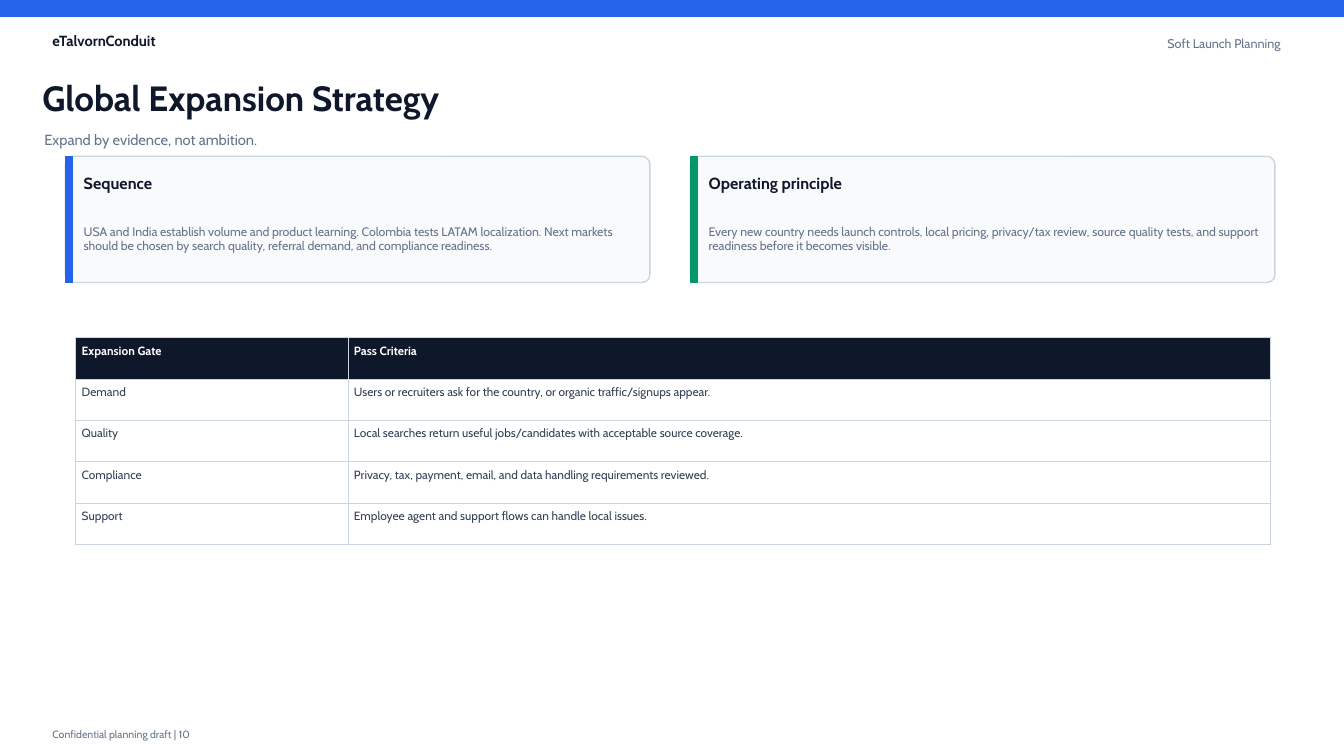
import pptx
import pptx.dml.color
import pptx.enum.shapes
import pptx.enum.text
import pptx.oxml
import pptx.oxml.ns
import pptx.util

Cm = pptx.util.Cm
Pt = pptx.util.Pt
RGBColor = pptx.dml.color.RGBColor
SHAPE = pptx.enum.shapes.MSO_SHAPE
ALIGN = pptx.enum.text.PP_ALIGN
ANCHOR = pptx.enum.text.MSO_ANCHOR

BLUE = RGBColor(0x25, 0x63, 0xEB)
GREEN = RGBColor(0x05, 0x96, 0x69)
INK = RGBColor(0x0F, 0x17, 0x2A)
SLATE = RGBColor(0x33, 0x41, 0x55)
GREY = RGBColor(0x64, 0x74, 0x8B)
BORDER = RGBColor(0xCB, 0xD5, 0xE1)
PANEL = RGBColor(0xF8, 0xFA, 0xFC)
WHITE = RGBColor(0xFF, 0xFF, 0xFF)

INSETS = ("margin_left", "margin_right", "margin_top", "margin_bottom")
CARDS = [
    ("Sequence", "USA and India establish volume and product learning. Colombia tests LATAM "
     "localization. Next markets should be chosen by search quality, referral demand, and "
     "compliance readiness.", BLUE),
    ("Operating principle", "Every new country needs launch controls, local pricing, privacy/tax "
     "review, source quality tests, and support readiness before it becomes visible.", GREEN),
]
GATES = [
    ("Expansion Gate", "Pass Criteria"),
    ("Demand", "Users or recruiters ask for the country, or organic traffic/signups appear."),
    ("Quality", "Local searches return useful jobs/candidates with acceptable source coverage."),
    ("Compliance", "Privacy, tax, payment, email, and data handling requirements reviewed."),
    ("Support", "Employee agent and support flows can handle local issues."),
]


def set_all(obj, values):
    """Set each attribute in a dict of format values."""
    for name, value in values.items():
        setattr(obj, name, value)


def write(tf, text, size, color, bold=False, align=ALIGN.LEFT):
    """Write one formatted paragraph into a text frame."""
    p = tf.paragraphs[0]
    p.alignment = align
    r = p.add_run()
    r.text = text
    set_all(r.font, {"name": "Cabin", "size": Pt(size), "bold": bold})
    r.font.color.rgb = color


def format_frame(tf, inset):
    """Wrap and centre a frame vertically, removing its insets if asked."""
    set_all(tf, {"word_wrap": True, "vertical_anchor": ANCHOR.MIDDLE,
                 "auto_size": pptx.enum.text.MSO_AUTO_SIZE.NONE})
    if not inset:
        set_all(tf, dict.fromkeys(INSETS, 0))


def add_text(s, box, text, size, color, bold=False, align=ALIGN.LEFT, inset=False):
    """Add a text box whose box is given in centimetres."""
    tf = s.shapes.add_textbox(*map(Cm, box)).text_frame
    format_frame(tf, inset)
    write(tf, text, size, color, bold, align)


def add_block(s, kind, box, fill, line):
    """Add a filled and outlined shape without shadow."""
    sp = s.shapes.add_shape(kind, *map(Cm, box))
    sp.shadow.inherit = False
    sp.fill.solid()
    sp.fill.fore_color.rgb = fill
    sp.line.color.rgb = line
    sp.line.width = Pt(1)
    return sp


def add_header(s, box):
    """Place the top band, brand, section label, title and subtitle."""
    x, y, w, h = box
    add_block(s, SHAPE.RECTANGLE, (x, y, w, 0.41), BLUE, BLUE)
    add_text(s, (x + 1.07, y + 0.71, 5.84, 0.64), "eTalvornConduit", 10.5, INK, True, inset=True)
    add_text(s, (x + w - 7.57, y + 0.76, 6.22, 0.66), "Soft Launch Planning", 9, GREY,
             align=ALIGN.RIGHT, inset=True)
    title = s.shapes.title
    set_all(title, {"left": Cm(x + 1.07), "top": Cm(y + 1.83),
                    "width": Cm(22.1), "height": Cm(1.27)})
    format_frame(title.text_frame, False)
    write(title.text_frame, "Global Expansion Strategy", 25, INK, True)
    add_text(s, (x + 1.12, y + 3.1, 24.13, 0.86), "Expand by evidence, not ambition.", 10.5, GREY)


def add_card(s, box, heading, body, accent):
    """Place a rounded panel with an accent bar, heading and body."""
    x, y, w, h = box
    panel = add_block(s, SHAPE.ROUNDED_RECTANGLE, box, PANEL, BORDER)
    panel.adjustments[0] = 0.064
    add_block(s, SHAPE.RECTANGLE, (x, y, 0.18, h), accent, accent)
    add_text(s, (x + 0.46, y + 0.36, w - 0.76, 0.64), heading, 11.5, INK, True)
    add_text(s, (x + 0.46, y + 1.22, w - 0.71, 1.7), body, 8.8, GREY)


def add_borders(cell):
    """Draw thin lines on all four sides of a cell."""
    tcPr = cell._tc.get_or_add_tcPr()
    for side in ("lnL", "lnR", "lnT", "lnB"):
        tcPr.append(pptx.oxml.parse_xml(
            f'<a:{side} {pptx.oxml.ns.nsdecls("a")} w="{Pt(0.7)}"><a:solidFill>'
            f'<a:srgbClr val="{BORDER}"/></a:solidFill></a:{side}>'))


def add_gate_table(s, box):
    """Place the table of expansion gates and pass criteria."""
    table = s.shapes.add_table(len(GATES), 2, *map(Cm, box)).table
    set_all(table, {"first_row": False, "horz_banding": False})
    table.columns[0].width = Cm(6.86)
    table.columns[1].width = Cm(box[2] - 6.86)
    for i, row in enumerate(GATES):
        head = i == 0
        for j, text in enumerate(row):
            cell = table.cell(i, j)
            set_all(cell, dict.fromkeys(INSETS, Cm(0.15)))
            add_borders(cell)
            cell.fill.solid()
            cell.fill.fore_color.rgb = INK if head else WHITE
            write(cell.text_frame, text, 8.5, WHITE if head else SLATE, head)


def add_footer(s, box):
    """Place the confidentiality note and page number."""
    add_text(s, box, "Confidential planning draft | 10", 7.5, GREY, inset=True)


def main():
    """Build the slide and save it."""
    prs = pptx.Presentation()
    set_all(prs, {"slide_width": Cm(33.87), "slide_height": Cm(19.05)})
    s = prs.slides.add_slide(prs.slide_layouts[5])
    add_header(s, (0, 0, 33.87, 3.96))
    for i, card in enumerate(CARDS):
        add_card(s, (1.65 + i * 15.75, 3.94, 14.73, 3.18), *card)
    add_gate_table(s, (1.91, 8.51, 30.1, 5.21))
    add_footer(s, (1.07, 18.24, 11.68, 0.51))
    prs.save("out.pptx")


if __name__ == "__main__":
    main()
